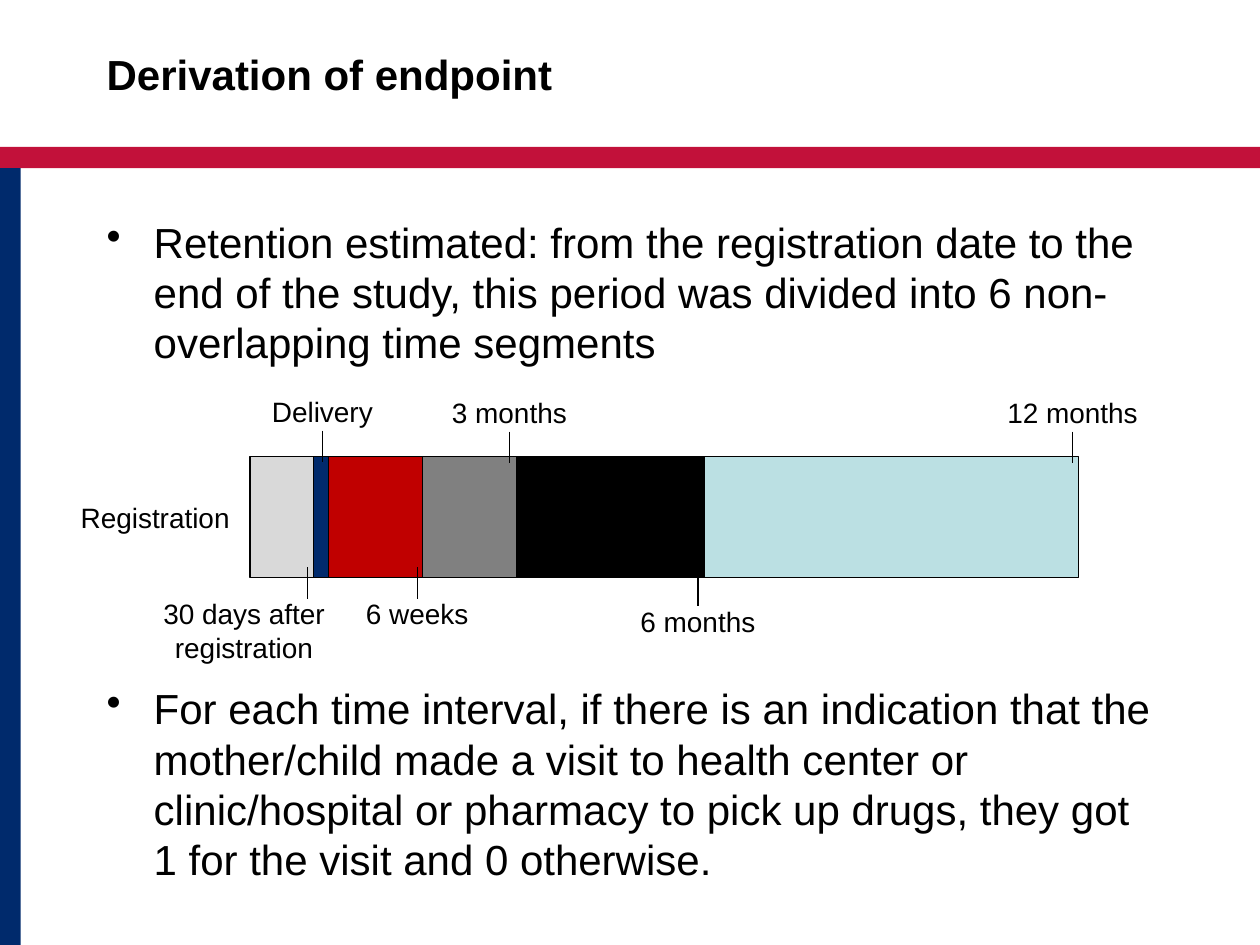
import pptx
import pptx.chart.data
import pptx.dml.color
import pptx.enum.chart
import pptx.enum.shapes
import pptx.enum.text
import pptx.oxml
import pptx.oxml.ns
import pptx.util

Cm = pptx.util.Cm
Pt = pptx.util.Pt
Align = pptx.enum.text.PP_ALIGN


def color(code):
    return pptx.dml.color.RGBColor.from_string(code)


class Deck:
    font = "Arial"
    ink = "000000"
    thin = Pt(0.75)

    def __init__(self, slide):
        self.slide = slide

    def bar(self, x, y, w, h, fill):
        kind = pptx.enum.shapes.MSO_SHAPE.RECTANGLE
        box = self.slide.shapes.add_shape(kind, Cm(x), Cm(y), Cm(w), Cm(h))
        box.shadow.inherit = False
        box.fill.solid()
        box.fill.fore_color.rgb = color(fill)
        box.line.fill.background()

    def text(self, x, y, w, h, words, size, align=Align.LEFT, bold=False):
        box = self.slide.shapes.add_textbox(Cm(x), Cm(y), Cm(w), Cm(h))
        box.text_frame.word_wrap = True
        para = box.text_frame.paragraphs[0]
        para.alignment = align
        run = para.add_run()
        run.text = words
        run.font.name = self.font
        run.font.size = Pt(size)
        run.font.bold = bold
        run.font.color.rgb = color(self.ink)
        return para

    def bullet(self, x, y, w, h, words, size):
        para = self.text(x, y, w, h, words, size)
        para.space_before = Pt(size * 0.2)
        props = para._p.get_or_add_pPr()
        props.set("marL", str(Cm(0.95)))
        props.set("indent", str(-Cm(0.95)))
        mark = pptx.oxml.ns.qn("a:buChar")
        props.append(props.makeelement(mark, {"char": "•"}))

    def tick(self, x, y, size):
        kind = pptx.enum.shapes.MSO_CONNECTOR.STRAIGHT
        line = self.slide.shapes.add_connector(
            kind, Cm(x), Cm(y), Cm(x), Cm(y + size))
        line.line.color.rgb = color(self.ink)
        line.line.width = self.thin
        props = line._element.spPr
        props.append(props.makeelement(pptx.oxml.ns.qn("a:effectLst"), {}))

    def stack(self, x, y, w, h, parts, top, frame):
        data = pptx.chart.data.CategoryChartData()
        data.categories = ["1"]
        for i, (value, _) in enumerate(parts, 1):
            data.add_series(f"Series {i}", [value])
        kind = pptx.enum.chart.XL_CHART_TYPE.BAR_STACKED
        chart = self.slide.shapes.add_chart(
            kind, Cm(x), Cm(y), Cm(w), Cm(h), data).chart
        chart.has_legend = chart.has_title = False
        chart.font.name = self.font
        chart.font.size = Pt(18)
        chart.font.color.rgb = color(self.ink)
        for axis in (chart.category_axis, chart.value_axis):
            axis.has_major_gridlines = False
            axis.visible = False
        chart.value_axis.minimum_scale = 0
        chart.value_axis.maximum_scale = top
        plot = chart.plots[0]
        plot.gap_width, plot.overlap = 95, 100
        plot.vary_by_categories = False
        for series, (_, fill) in zip(plot.series, parts):
            series.format.fill.solid()
            series.format.fill.fore_color.rgb = color(fill)
            series.format.line.color.rgb = color(self.ink)
            series.format.line.width = self.thin
        self.place(chart, frame)

    def place(self, chart, frame):
        # Fixed inner plot area, as shares of the chart
        rows = [("layoutTarget", "inner"), ("xMode", "edge"),
                ("yMode", "edge"), *zip("xywh", frame)]
        tags = "".join(f'<c:{tag} val="{val}"/>' for tag, val in rows)
        space = pptx.oxml.ns.nsdecls("c")
        node = pptx.oxml.parse_xml(
            f"<c:layout {space}><c:manualLayout>{tags}"
            "</c:manualLayout></c:layout>")
        area = chart._chartSpace.chart.plotArea
        old = area.find(pptx.oxml.ns.qn("c:layout"))
        if old is not None:
            area.remove(old)
        area.insert(0, node)


def main():
    show = pptx.Presentation()
    show.slide_width, show.slide_height = Cm(25.4), Cm(19.05)
    deck = Deck(show.slides.add_slide(show.slide_layouts[6]))

    # Frame and title
    deck.bar(0, 2.96, 25.4, 0.43, "C2113A")
    deck.bar(0, 3.39, 0.42, 15.66, "002A6C")
    deck.text(1.9, 0.85, 21.6, 1.7, "Derivation of endpoint", 24, bold=True)

    # Bullets
    deck.bullet(1.9, 4.23, 21.6, 3.2, "Retention estimated: from the "
                "registration date to the end of the study, this period was "
                "divided into 6 non-overlapping time segments", 24)
    deck.bullet(1.9, 13.64, 21.6, 4.3, "For each time interval, if there is "
                "an indication that the mother/child made a visit to health "
                "center or clinic/hospital or pharmacy to pick up drugs, they "
                "got 1 for the visit and 0 otherwise.", 24)

    # Time segments
    parts = [(17, "D9D9D9"), (4, "002A6C"), (25, "C00000"),
             (25, "808080"), (50, "000000"), (100, "BBE0E3")]
    deck.stack(4.45, 7.67, 19.69, 5.51, parts, 250, (0.03, 0.07, 0.96, 0.86))

    # Marks: words, tick left, tick top, label gap, label shift
    over, under, wide = -0.85, 0.48, 4.24
    marks = [("Delivery", 6.5, 8.68, over, 0),
             ("3 months", 10.27, 8.7, over, 0),
             ("12 months", 21.62, 8.7, over, 0),
             ("30 days after registration", 6.2, 11.43, under, -1.28),
             ("6 weeks", 8.41, 11.43, under, 0),
             ("6 months", 14.07, 11.58, under, 0)]
    for words, x, y, gap, shift in marks:
        deck.tick(x, y, 0.64)
        deck.text(x + shift - wide / 2, y + gap, wide, 0.94, words, 16,
                  Align.CENTER)
    deck.text(0.64, 9.96, wide, 0.94, "Registration", 16, Align.RIGHT)

    show.save("out.pptx")


if __name__ == "__main__":
    main()
